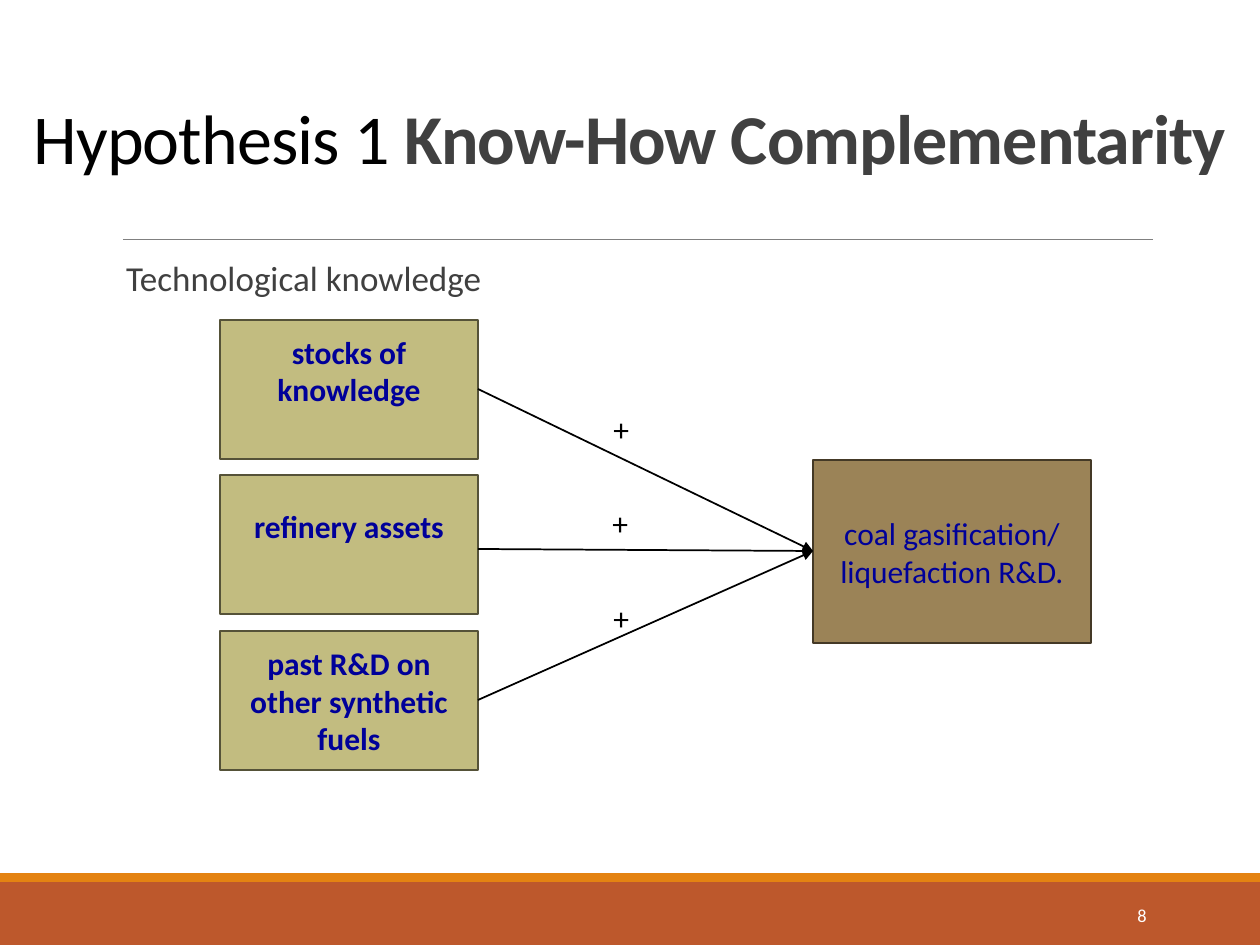
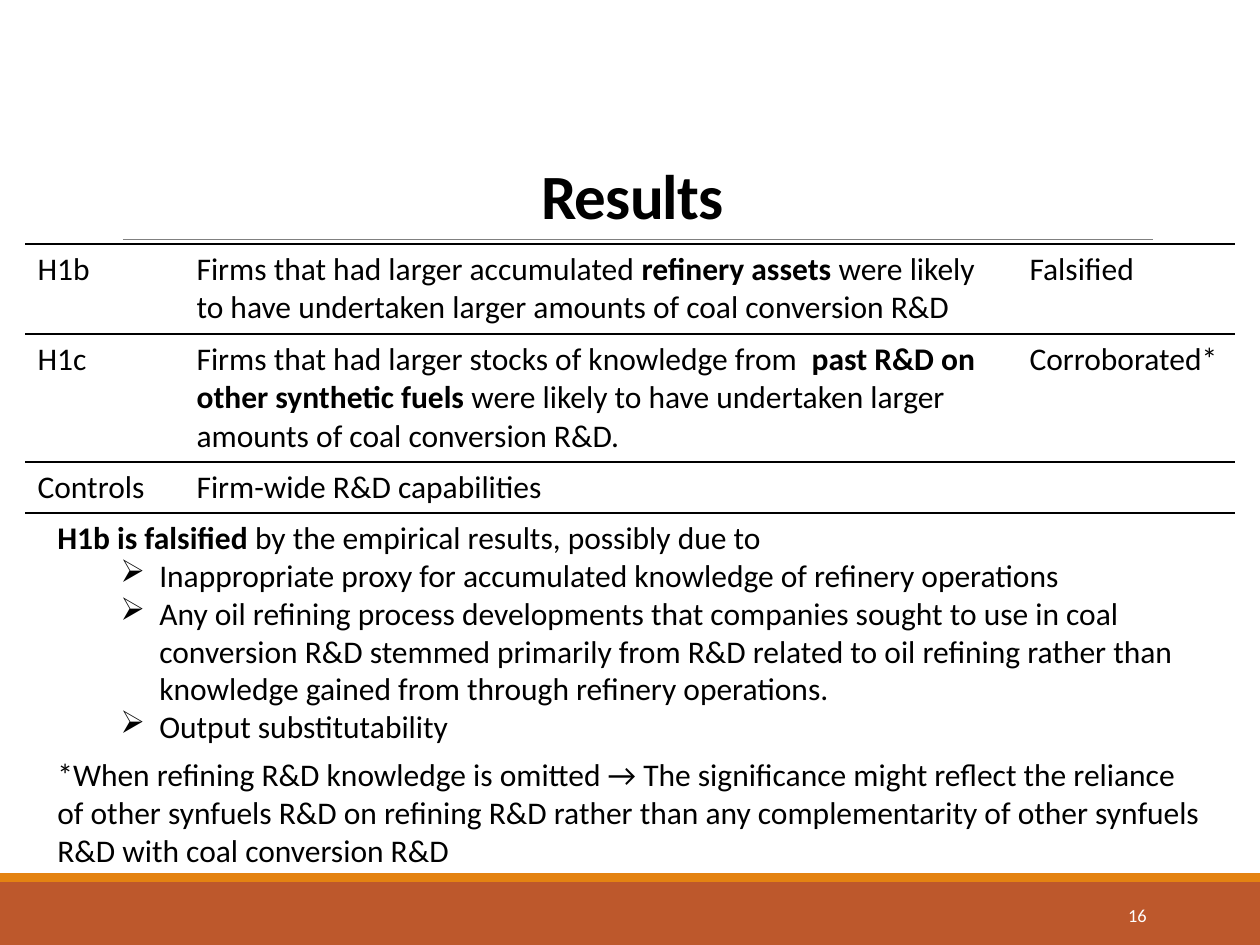
"""Build two slides on a know-how hypothesis and its test results."""
from lxml import etree
from pptx import Presentation
from pptx.dml.color import RGBColor
from pptx.enum import shapes, text
from pptx.oxml import ns
from pptx.util import Emu, Pt

COLORS = {
    "black": "000000", "white": "FFFFFF", "gray": "404040", "rule": "808080",
    "rust": "BD582C", "orange": "E48312", "navy": "000099",
    "khaki": "C2BC80", "khaki_edge": "555238",
    "brown": "9B8357", "brown_edge": "443926",
}
FONT = "Calibri"
PX = 914400 / 126

# A bar in a text switches bold on or off.
HYPOTHESIS = {
    "title": "Hypothesis 1| Know-How Complementarity",
    "title_box": (0, 0, 1260, 185),
    "number": "8",
    "subtitle": "Technological knowledge",
    "effect": "coal gasification/ liquefaction R&D.",
    "effect_box": (813, 460, 278, 183),
    "sign": "+",
}
# text, top, extra bottom inset, arrow start, sign position
CAUSES = [
    ("|stocks of knowledge", 320, 38, 389, (601, 404)),
    ("|refinery assets", 475, 38, 549, (600, 498)),
    ("|past R&D on other synthetic fuels", 631, 0, 700, (601, 593)),
]
CAUSE_LEFT, CAUSE_WIDTH, CAUSE_HEIGHT = 220, 258, 139

RESULTS = {
    "title": "|Results",
    "title_box": (0, 39, 1265, 200),
    "number": "16",
    "columns": [159, 833, 218],
    "row_heights": [90, 128, 51],
    "rows": [
        ("H1b", "Firms that had larger accumulated |refinery assets| were likely to have "
                "undertaken larger amounts of coal conversion R&D", "Falsified"),
        ("H1c", "Firms that had larger stocks of knowledge from  |past R&D on other synthetic "
                "fuels| were likely to have undertaken larger amounts of coal conversion R&D.",
         "Corroborated*"),
        ("Controls", "Firm-wide R&D capabilities", ""),
    ],
    "finding": "|H1b is falsified |by the empirical results, possibly due to",
    "reasons": [
        "Inappropriate proxy for accumulated knowledge of refinery operations",
        "Any oil refining process developments that companies sought to use in coal conversion "
        "R&D stemmed primarily from R&D related to oil refining rather than knowledge gained "
        "from through refinery operations.",
        "Output substitutability",
    ],
    "footnote": "*When refining R&D knowledge is omitted → The significance might reflect the "
                "reliance of other synfuels R&D on refining R&D rather than any complementarity "
                "of other synfuels R&D with coal conversion R&D",
}


def px(*lengths):
    return [Emu(round(length * PX)) for length in lengths]


def rgb(name):
    return RGBColor.from_string(COLORS[name])


def add_xml(parent, tag, **attributes):
    return etree.SubElement(parent, ns.qn(tag), attributes)


def write(frame, *paragraphs, size=18, color="black", bold_color=None, align="LEFT",
          anchor=None, insets=None, line_spacing=None, tracking=None):
    """Fill a text frame with paragraphs in one format."""
    if anchor:
        frame.word_wrap = True
        frame.auto_size = text.MSO_AUTO_SIZE.NONE
        frame.vertical_anchor = text.MSO_ANCHOR[anchor]
    if insets:
        (frame.margin_left, frame.margin_top,
         frame.margin_right, frame.margin_bottom) = px(*insets)
    for index, content in enumerate(paragraphs):
        paragraph = frame.add_paragraph() if index else frame.paragraphs[0]
        paragraph.alignment = text.PP_ALIGN[align]
        if line_spacing:
            paragraph.line_spacing = line_spacing
        for part, piece in enumerate(content.split("|")):
            if not piece:
                continue
            run = paragraph.add_run()
            run.text = piece
            bold = part % 2 == 1
            run.font.name, run.font.size, run.font.bold = FONT, Pt(size), bold
            run.font.color.rgb = rgb(bold_color if bold and bold_color else color)
            if tracking:
                run.font._element.set("spc", str(tracking))


def add_text(slide, box, *paragraphs, **style):
    frame = slide.shapes.add_textbox(*px(*box)).text_frame
    write(frame, *paragraphs, **{"anchor": "TOP", **style})
    return frame


def add_box(slide, box, fill, edge=None):
    shape = slide.shapes.add_shape(shapes.MSO_SHAPE.RECTANGLE, *px(*box))
    shape.shadow.inherit = False
    shape.fill.solid()
    shape.fill.fore_color.rgb = rgb(fill)
    if edge:
        shape.line.color.rgb = rgb(edge)
        shape.line.width = Pt(1.25)
    else:
        shape.line.fill.background()
    return shape


def add_line(slide, ends, color, width, arrow=False):
    line = slide.shapes.add_connector(shapes.MSO_CONNECTOR.STRAIGHT, *px(*ends))
    line.line.color.rgb = rgb(color)
    line.line.width = Pt(width)
    if arrow:
        add_xml(line.line._get_or_add_ln(), "a:tailEnd", type="triangle")
    add_xml(line._element.spPr, "a:effectLst")


def add_slide(presentation, content, **title_style):
    slide = presentation.slides.add_slide(presentation.slide_layouts[5])
    add_box(slide, (0, 882, 1260, 63), "rust")
    add_box(slide, (0, 873, 1260, 9), "orange")
    add_line(slide, (123, 239, 1153, 239), "rule", 0.5)
    title = slide.shapes.title
    title.left, title.top, title.width, title.height = px(*content["title_box"])
    write(title.text_frame, content["title"], align="CENTER", anchor="BOTTOM",
          line_spacing=0.85, tracking=-50, **title_style)
    add_text(slide, (1023, 890, 136, 50), content["number"], size=10.5, color="white",
             align="RIGHT", anchor="MIDDLE")
    return slide


def build_hypothesis(presentation):
    slide = add_slide(presentation, HYPOTHESIS, size=40, bold_color="gray")
    add_text(slide, (113, 255, 1040, 50), HYPOTHESIS["subtitle"], size=20, color="gray",
             insets=(13, 6, 0, 6), line_spacing=0.9)
    centered = {"color": "navy", "align": "CENTER", "anchor": "MIDDLE"}
    left, top, width, height = HYPOTHESIS["effect_box"]
    effect = add_box(slide, HYPOTHESIS["effect_box"], "brown", "brown_edge")
    write(effect.text_frame, HYPOTHESIS["effect"], **centered)
    for label, cause_top, extra, start, sign_at in CAUSES:
        cause = add_box(slide, (CAUSE_LEFT, cause_top, CAUSE_WIDTH, CAUSE_HEIGHT),
                        "khaki", "khaki_edge")
        write(cause.text_frame, label, insets=(13, 6, 13, 6 + extra), **centered)
        add_line(slide, (CAUSE_LEFT + CAUSE_WIDTH, start, left, top + height // 2),
                 "black", 1, arrow=True)
        add_text(slide, (*sign_at, 63, 50), HYPOTHESIS["sign"])


def set_borders(cell):
    """Rule a cell above and below only."""
    properties = cell._tc.get_or_add_tcPr()
    for side in "LRTB":
        line = add_xml(properties, f"a:ln{side}", w=str(Pt(1)))
        if side in "LR":
            add_xml(line, "a:noFill")
        else:
            add_xml(add_xml(line, "a:solidFill"), "a:srgbClr", val=COLORS["black"])


def add_results_table(slide):
    columns, heights = RESULTS["columns"], RESULTS["row_heights"]
    table = slide.shapes.add_table(len(heights), len(columns),
                                   *px(25, 244, sum(columns), sum(heights))).table
    table.first_row = table.horz_banding = False
    for column, width in zip(table.columns, px(*columns)):
        column.width = width
    for row, height, texts in zip(table.rows, px(*heights), RESULTS["rows"]):
        row.height = height
        for cell, content in zip(row.cells, texts):
            set_borders(cell)
            cell.fill.background()
            write(cell.text_frame, content)


def build_results(presentation):
    slide = add_slide(presentation, RESULTS, size=36)
    add_results_table(slide)
    frame = add_text(slide, (45, 512, 1174, 366), RESULTS["finding"], *RESULTS["reasons"],
                     RESULTS["footnote"])
    marker, hanging = px(102, -39)
    for paragraph in frame.paragraphs[1:-1]:
        properties = paragraph._p.get_or_add_pPr()
        properties.set("marL", str(marker))
        properties.set("indent", str(hanging))
        add_xml(properties, "a:buChar", char="➢")
    frame.paragraphs[-1].space_before = Pt(6)


def main():
    presentation = Presentation()
    presentation.slide_width, presentation.slide_height = px(1260, 945)
    build_hypothesis(presentation)
    build_results(presentation)
    presentation.save("out.pptx")


if __name__ == "__main__":
    main()
